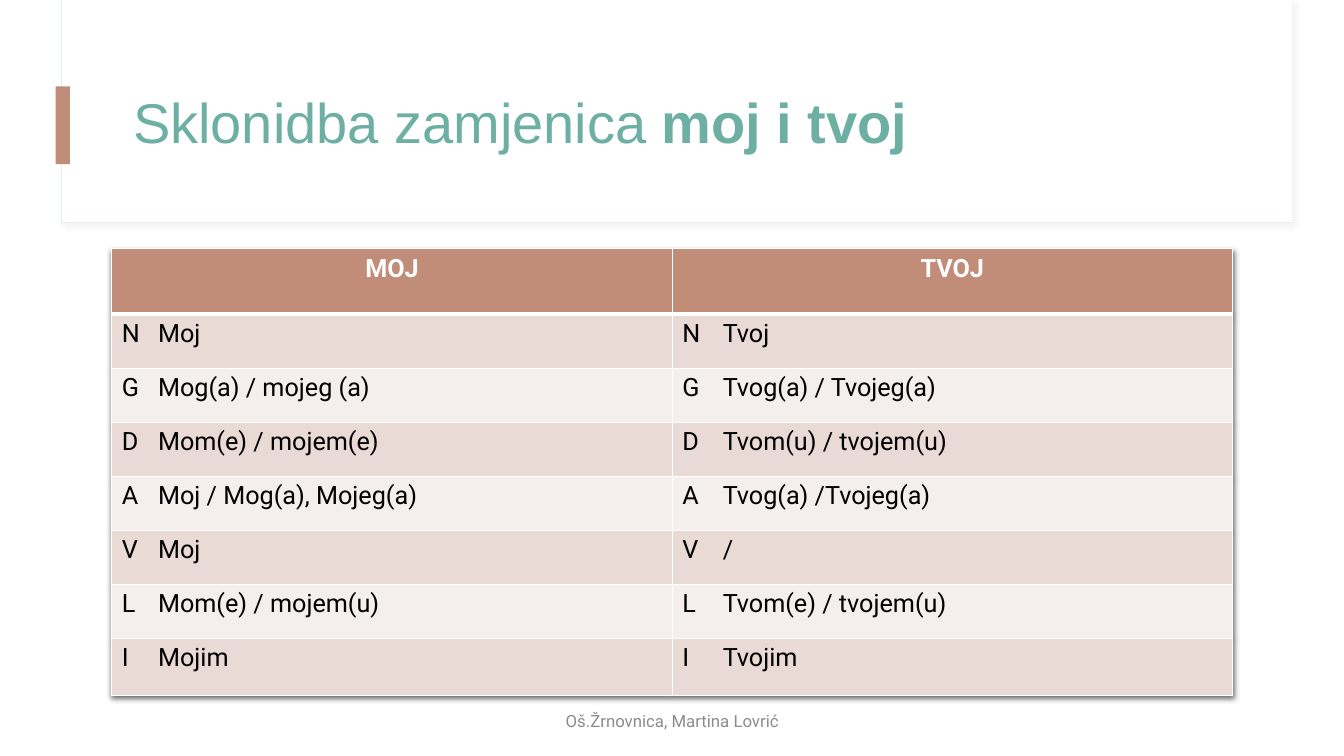
from lxml.etree import SubElement
from pptx import Presentation
from pptx.dml.color import RGBColor
from pptx.enum.shapes import MSO_SHAPE
from pptx.enum.text import MSO_ANCHOR, PP_ALIGN
from pptx.oxml import parse_xml
from pptx.oxml.ns import nsdecls, qn
from pptx.util import Cm, Pt

WHITE = RGBColor(0xFF, 0xFF, 0xFF)
BLACK = RGBColor(0x00, 0x00, 0x00)
CLAY = RGBColor(0xC1, 0x8C, 0x78)
BAND_DARK = RGBColor(0xE9, 0xDA, 0xD6)
BAND_LIGHT = RGBColor(0xF4, 0xEE, 0xEC)
TEAL = RGBColor(0x6D, 0xAF, 0xA2)
PALE_LINE = RGBColor(0xE4, 0xED, 0xF0)
SHADOW_GREY = RGBColor(0xD9, 0xD9, 0xD9)
FOOTER_GREY = RGBColor(0x8C, 0x8C, 0x8C)

TITLE_FONT = {"name": "Arial", "size": Pt(40), "color": TEAL}
HEADER_FONT = {"name": "Roboto", "size": Pt(18), "color": WHITE, "bold": True}
BODY_FONT = {"name": "Roboto", "size": Pt(18), "color": BLACK, "bold": False}
FOOTER_FONT = {"name": "Roboto", "size": Pt(12), "color": FOOTER_GREY}

HEADINGS = ("MOJ", "TVOJ")
FORM_INDENTS = (Cm(0.91), Cm(1.02))
DECLENSION = (
    ("N", "Moj", "Tvoj"),
    ("G", "Mog(a) / mojeg (a)", "Tvog(a) / Tvojeg(a)"),
    ("D", "Mom(e) / mojem(e)", "Tvom(u) / tvojem(u)"),
    ("A", "Moj / Mog(a), Mojeg(a)", "Tvog(a) /Tvojeg(a)"),
    ("V", "Moj", "/"),
    ("L", "Mom(e) / mojem(u)", "Tvom(e) / tvojem(u)"),
    ("I", "Mojim", "Tvojim"),
)
ROW_HEIGHTS = [Cm(1.65)] + [Cm(1.36)] * 6 + [Cm(1.44)]


def shadow_effect(color, opacity, blur, distance, angle):
    return parse_xml(
        f'<a:effectLst {nsdecls("a")}><a:outerShdw blurRad="{Pt(blur)}" '
        f'dist="{Pt(distance)}" dir="{angle * 60000}" algn="tl" rotWithShape="0">'
        f'<a:srgbClr val="{color}"><a:alpha val="{opacity * 1000}"/></a:srgbClr>'
        "</a:outerShdw></a:effectLst>"
    )


class GrammarSlide:
    def __init__(self, deck):
        self.slide = deck.slides.add_slide(deck.slide_layouts[5])
        self.shapes = self.slide.shapes

    def add_text(self, paragraph, text, style, **changes):
        run = paragraph.add_run()
        run.text = text
        for key, value in {**style, **changes}.items():
            if key == "color":
                run.font.color.rgb = value
            else:
                setattr(run.font, key, value)

    def panel(self, left, top, width, height, fill, line=None):
        panel = self.shapes.add_shape(MSO_SHAPE.RECTANGLE, left, top, width, height)
        panel.shadow.inherit = False
        panel.fill.solid()
        panel.fill.fore_color.rgb = fill
        if line is None:
            panel.line.fill.background()
        else:
            panel.line.color.rgb = line
            panel.line.width = Pt(0.75)
        return panel

    def title(self, plain, strong, **place):
        heading = self.shapes.title
        for key, value in place.items():
            setattr(heading, key, value)
        # The placeholder comes first in the stack, so lift it above the panels
        heading._element.getparent().append(heading._element)
        heading.text_frame.vertical_anchor = MSO_ANCHOR.MIDDLE
        paragraph = heading.text_frame.paragraphs[0]
        paragraph.alignment = PP_ALIGN.LEFT
        paragraph.line_spacing = 0.9
        self.add_text(paragraph, plain, TITLE_FONT)
        self.add_text(paragraph, strong, TITLE_FONT, bold=True)

    def cell(self, cell, text, style, fill, top=1, bottom=1, indent=None):
        cell.fill.solid()
        cell.fill.fore_color.rgb = fill
        properties = cell._tc.get_or_add_tcPr()
        for place, (side, width) in enumerate(
            (("L", 1), ("R", 1), ("T", top), ("B", bottom))
        ):
            properties.insert(place, parse_xml(
                f'<a:ln{side} {nsdecls("a")} w="{Pt(width)}"><a:solidFill>'
                f'<a:srgbClr val="{WHITE}"/></a:solidFill></a:ln{side}>'
            ))
        paragraph = cell.text_frame.paragraphs[0]
        if indent is None:
            paragraph.alignment = PP_ALIGN.CENTER
        else:
            stops = SubElement(paragraph._p.get_or_add_pPr(), qn("a:tabLst"))
            SubElement(stops, qn("a:tab"), pos=str(indent), algn="l")
        self.add_text(paragraph, text, style)

    def declension_table(self, left, top, width):
        table = self.shapes.add_table(
            len(ROW_HEIGHTS), len(HEADINGS), left, top, width, sum(ROW_HEIGHTS)
        ).table
        table._tbl.tblPr.insert(0, shadow_effect(BLACK, 60, 3, 2, 90))
        for row, height in zip(table.rows, ROW_HEIGHTS):
            row.height = height
        for column, heading in enumerate(HEADINGS):
            self.cell(table.cell(0, column), heading, HEADER_FONT, CLAY, bottom=3)
            for row, (case, *forms) in enumerate(DECLENSION, start=1):
                self.cell(
                    table.cell(row, column), f"{case}\t{forms[column]}", BODY_FONT,
                    BAND_DARK if row % 2 else BAND_LIGHT,
                    top=3 if row == 1 else 1, indent=FORM_INDENTS[column],
                )

    def footer(self, text, left, top, width, height):
        frame = self.shapes.add_textbox(left, top, width, height).text_frame
        frame.word_wrap = True
        frame.vertical_anchor = MSO_ANCHOR.MIDDLE
        frame.paragraphs[0].alignment = PP_ALIGN.CENTER
        self.add_text(frame.paragraphs[0], text, FOOTER_FONT)


def main():
    deck = Presentation()
    deck.slide_width, deck.slide_height = Cm(33.87), Cm(19.05)
    page = GrammarSlide(deck)

    # Title panel with its accent bar
    frame = page.panel(Cm(1.55), Cm(0), Cm(31.01), Cm(5.61), WHITE, PALE_LINE)
    properties = frame._element.spPr
    properties.replace(
        properties.find(qn("a:effectLst")), shadow_effect(SHADOW_GREY, 30, 4, 3, 45)
    )
    page.panel(Cm(1.57), Cm(0), Cm(30.99), Cm(5.59), WHITE)
    page.panel(Cm(1.4), Cm(2.18), Cm(0.36), Cm(1.96), CLAY)
    page.title("Sklonidba zamjenica ", "moj i tvoj",
               left=Cm(3.1), top=Cm(1.52), width=Cm(28.24), height=Cm(3.28))

    # Declension of both pronouns
    page.declension_table(Cm(2.82), Cm(6.27), Cm(28.24))

    # Footer
    page.footer("Oš.Žrnovnica, Martina Lovrić",
                Cm(11.23), Cm(17.65), Cm(11.43), Cm(1.02))

    deck.save("out.pptx")


if __name__ == "__main__":
    main()
